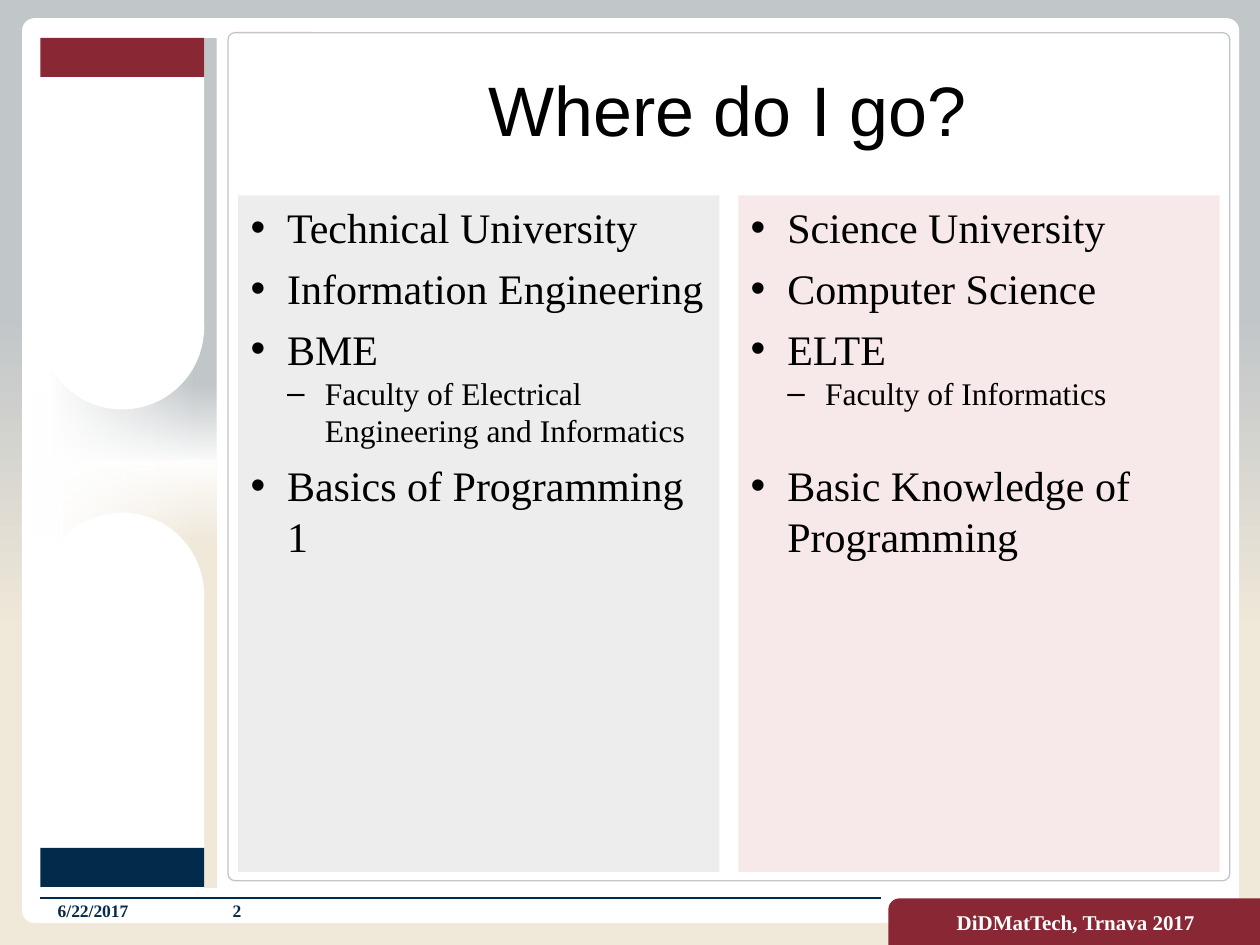
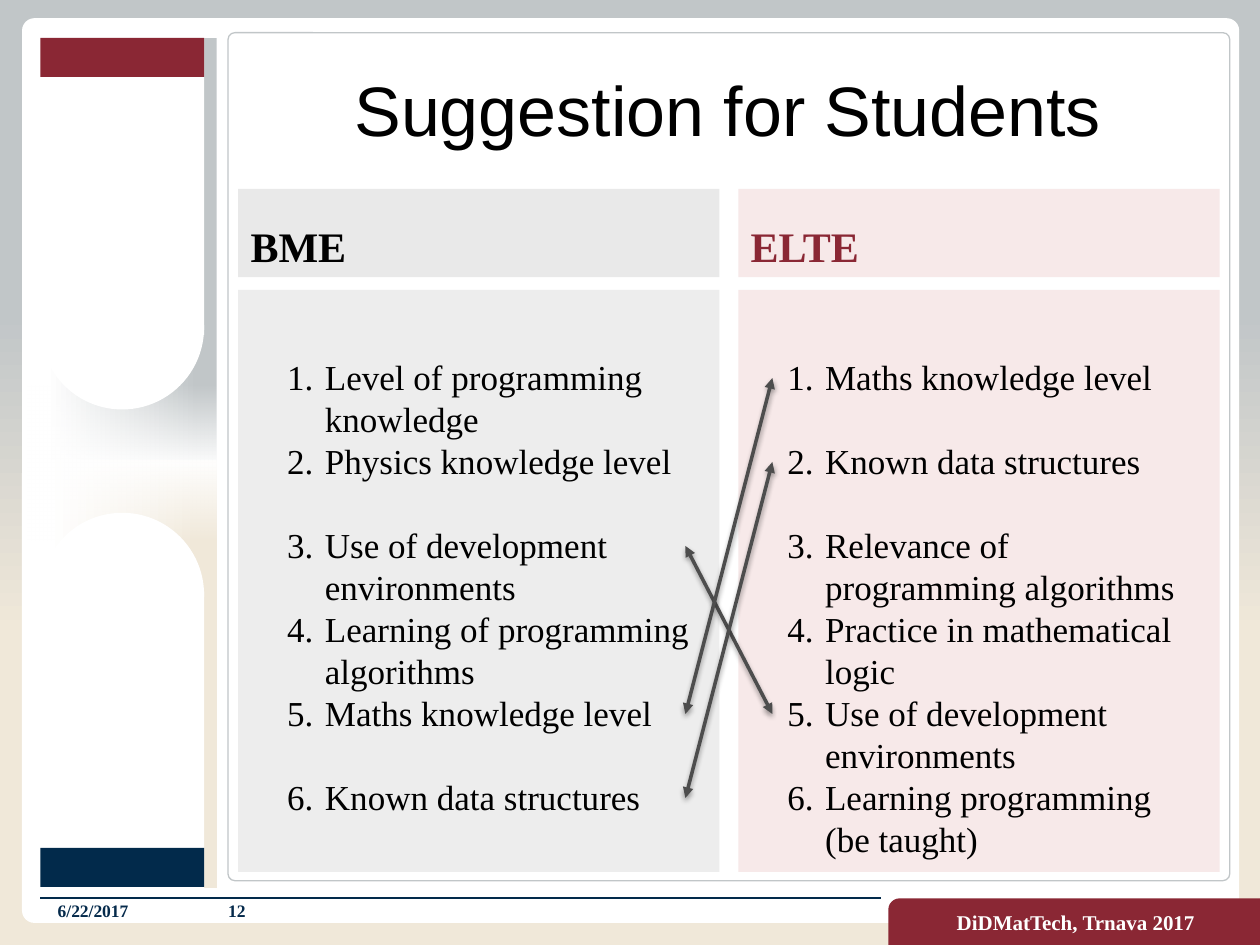
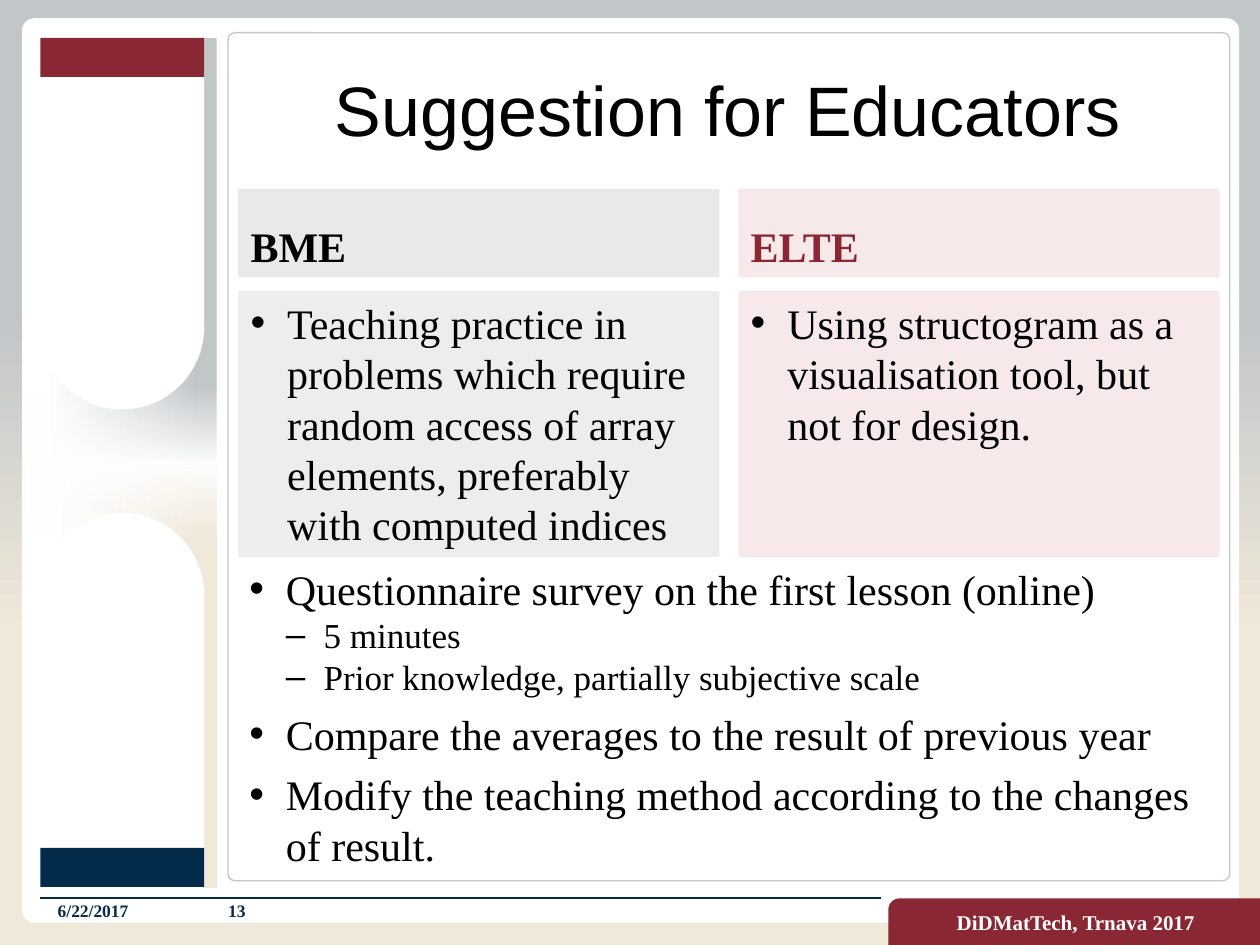
import pptx
import pptx.util
from dataclasses import dataclass
from lxml import etree
from pptx.dml.color import RGBColor
from pptx.enum.shapes import MSO_CONNECTOR, MSO_SHAPE
from pptx.enum.text import MSO_ANCHOR, PP_ALIGN
from pptx.oxml.ns import qn
from pptx.util import Inches, Pt


@dataclass(frozen=True)
class Theme:
    white: str = "FFFFFF"
    black: str = "000000"
    silver: str = "C1C6C8"
    sand: str = "F0E8D9"
    wine: str = "8A2734"
    navy: str = "022A4B"
    small_navy: str = "052A4B"
    arrow: str = "4D4D4D"
    gray_panel: str = "EDEDED"
    gray_head: str = "E9E9E9"
    rose_panel: str = "F7E9E9"
    title_font: str = "Arial"
    body_font: str = "Times New Roman"
    title: int = 40
    point: int = 24
    sub: int = 20
    small_sub: int = 18
    event: int = 12
    footer: int = 10
    leading: float = 1.2


T = Theme()
DATE = "6/22/2017"
EVENT = "DiDMatTech, Trnava 2017"
COLUMN_LEFTS = (1.89, 5.86)
COLUMN_WIDTH = 3.82
HEAD_TOP, HEAD_HEIGHT = 1.5, 0.7
HEADS = [("BME", T.gray_head, T.black), ("ELTE", T.rose_panel, T.wine)]
PANEL_FILLS = (T.gray_panel, T.rose_panel)

KINDS = {
    "point": dict(margin=0.29, hang=0.29, before=6, size=T.point, bullet="•"),
    "dash": dict(margin=0.59, hang=0.3, before=0, size=T.sub, bullet="–"),
    "small dash": dict(margin=0.59, hang=0.3, before=0, size=T.small_sub, bullet="–"),
    "number": dict(margin=0.59, hang=0.3, before=0, size=T.sub, bullet=None),
}

SLIDES = [
    dict(
        title="Where do I go?", number="2", heads=False, top=1.55, height=5.37, inset=0.05,
        columns=[
            [("point", "Technical University", 0),
             ("point", "Information Engineering", 0),
             ("point", "BME", 0),
             ("small dash", "Faculty of Electrical Engineering and Informatics", 0),
             ("point", "Basics of Programming 1", 0)],
            [("point", "Science University", 0),
             ("point", "Computer Science", 0),
             ("point", "ELTE", 0),
             ("small dash", "Faculty of Informatics", 1),
             ("point", "Basic Knowledge of Programming", 0)],
        ],
        links=[], summary=[],
    ),
    dict(
        title="Suggestion for Students", number="12", heads=True, top=2.3, height=4.62, inset=0.52,
        columns=[
            [("number", "Level of programming knowledge", 0),
             ("number", "Physics knowledge level", 1),
             ("number", "Use of development environments", 0),
             ("number", "Learning of programming algorithms", 0),
             ("number", "Maths knowledge level", 1),
             ("number", "Known data structures", 0)],
            [("number", "Maths knowledge level", 1),
             ("number", "Known data structures", 1),
             ("number", "Relevance of programming algorithms", 0),
             ("number", "Practice in mathematical logic", 0),
             ("number", "Use of development environments", 0),
             ("number", "Learning programming\n(be taught)", 0)],
        ],
        links=[(3, 5), (5, 1), (6, 2)], summary=[],
    ),
    dict(
        title="Suggestion for Educators", number="13", heads=True, top=2.31, height=2.11, inset=0.05,
        columns=[
            [("point", "Teaching practice in problems which require random access of array "
                       "elements, preferably with computed indices", 0)],
            [("point", "Using structogram as a visualisation tool, but not for design.", 0)],
        ],
        links=[],
        summary=[
            ("point", "Questionnaire survey on the first lesson (online)", 0),
            ("dash", "5 minutes", 0),
            ("dash", "Prior knowledge, partially subjective scale", 0),
            ("point", "Compare the averages to the result of previous year", 0),
            ("point", "Modify the teaching method according to the changes of result.", 0),
        ],
    ),
]


def rgb(color):
    return RGBColor.from_string(color)


def box(at):
    return [Inches(v) for v in at]


def gradient(owner, stops, angle):
    grad = etree.Element(qn("a:gradFill"), rotWithShape="1")
    stop_list = etree.SubElement(grad, qn("a:gsLst"))
    for position, color, alpha in stops:
        stop = etree.SubElement(stop_list, qn("a:gs"), pos=str(position * 1000))
        clr = etree.SubElement(stop, qn("a:srgbClr"), val=color)
        if alpha < 100:
            etree.SubElement(clr, qn("a:alpha"), val=str(alpha * 1000))
    etree.SubElement(grad, qn("a:lin"), ang=str(angle * 60000), scaled="0")
    solid = owner.find(".//" + qn("a:solidFill"))
    solid.getparent().replace(solid, grad)


def add_shape(s, at, fill=T.white, kind=MSO_SHAPE.RECTANGLE, line=None, adj=None):
    sp = s.shapes.add_shape(kind, *box(at))
    sp.shadow.inherit = False
    sp.fill.solid()
    sp.fill.fore_color.rgb = rgb(fill)
    if line:
        sp.line.color.rgb = rgb(line)
        sp.line.width = Pt(0.75)
    else:
        sp.line.fill.background()
    if adj is not None:
        sp.adjustments[0] = adj
    return sp


def add_line(s, start, end, color, width):
    cx = s.shapes.add_connector(MSO_CONNECTOR.STRAIGHT, *box(start + end))
    cx.line.color.rgb = rgb(color)
    cx.line.width = Pt(width)
    return cx, etree.SubElement(cx._element.spPr, qn("a:effectLst"))


def add_run(p, text, size, color=T.black, font=T.body_font, bold=False):
    r = p.add_run()
    r.text = text
    r.font.name, r.font.size, r.font.bold = font, Pt(size), bold
    r.font.color.rgb = rgb(color)


def write_label(sp, text, size, align=PP_ALIGN.LEFT, anchor=MSO_ANCHOR.MIDDLE, **style):
    tf = sp.text_frame
    tf.word_wrap = True
    tf.vertical_anchor = anchor
    p = tf.paragraphs[0]
    p.alignment = align
    add_run(p, text, size, **style)


def write_list(sp, items, inset=0.05):
    tf = sp.text_frame
    tf.word_wrap = True
    tf.vertical_anchor = MSO_ANCHOR.TOP
    tf.margin_top = Inches(inset)
    for i, (kind, text, blank_lines) in enumerate(items):
        k = KINDS[kind]
        p = tf.add_paragraph() if i else tf.paragraphs[0]
        pPr = p._p.get_or_add_pPr()
        pPr.set("marL", str(Inches(k["margin"])))
        pPr.set("indent", str(-Inches(k["hang"])))
        if k["bullet"]:
            etree.SubElement(pPr, qn("a:buFont"), typeface=T.title_font)
            etree.SubElement(pPr, qn("a:buChar"), char=k["bullet"])
        else:
            etree.SubElement(pPr, qn("a:buAutoNum"), type="arabicPeriod")
        leading = k["size"] * T.leading
        p.alignment = PP_ALIGN.LEFT
        p.line_spacing = Pt(leading)
        p.space_before = Pt(k["before"] if i else 0)
        p.space_after = Pt(leading * blank_lines)
        for n, part in enumerate(text.split("\n")):
            if n:
                p.add_line_break()
            add_run(p, part, k["size"])


def add_frame(s):
    s.background.fill.solid()
    s.background.fill.fore_color.rgb = rgb(T.white)
    gradient(s._element, [(33, T.silver, 100), (67, T.sand, 100)], 90)
    add_shape(s, (0.18, 0.15, 9.65, 7.17), kind=MSO_SHAPE.ROUNDED_RECTANGLE, line=T.white, adj=0.013)
    bands = [
        ((0.22, 0.3, 1.5, 3.39), [(10, T.silver, 100), (90, T.white, 100)], 180),
        ((0.22, 3.65, 1.5, 3.4), [(10, T.white, 100), (90, T.sand, 100)], 0),
        ((0.22, 1.61, 1.5, 4.13), [(35, T.white, 0), (50, T.white, 95), (65, T.white, 0)], 90),
    ]
    for at, stops, angle in bands:
        gradient(add_shape(s, at)._element, stops, angle)
    add_shape(s, (1.81, 0.26, 7.95, 6.73), kind=MSO_SHAPE.ROUNDED_RECTANGLE, line=T.silver, adj=0.008)
    pillar = [
        (0.3, 2.36, T.white, MSO_SHAPE.RECTANGLE),
        (0.3, 0.31, T.wine, MSO_SHAPE.RECTANGLE),
        (4.69, 2.36, T.white, MSO_SHAPE.RECTANGLE),
        (1.95, 1.3, T.white, MSO_SHAPE.OVAL),
        (4.07, 1.3, T.white, MSO_SHAPE.OVAL),
        (6.73, 0.31, T.navy, MSO_SHAPE.RECTANGLE),
    ]
    for top, height, fill, kind in pillar:
        add_shape(s, (0.32, top, 1.3, height), fill, kind)
    add_line(s, (0.32, 7.13), (6.99, 7.13), T.navy, 1.25)


def add_footer(s, number):
    tab = add_shape(s, (7.05, 7.13, 2.95, 0.37), T.wine, MSO_SHAPE.ROUND_1_RECTANGLE, adj=0.244)
    tab._element.spPr.find(qn("a:xfrm")).set("flipH", "1")
    write_label(tab, EVENT, T.event, PP_ALIGN.CENTER, color=T.white, bold=True)
    for left, text, align in ((1.39, number, PP_ALIGN.CENTER), (0.36, DATE, PP_ALIGN.LEFT)):
        sp = s.shapes.add_textbox(*box((left, 7.13, 0.98, 0.2)))
        write_label(sp, text, T.footer, align, color=T.small_navy, bold=True)


def add_link(s, left_item, right_item):
    left_y, right_y = (3 + (n - 1) * 2 / 3 for n in (left_item, right_item))
    cx, effects = add_line(s, (5.44, left_y), (6.13, right_y), T.arrow, 2)
    ln = cx.line._get_or_add_ln()
    for end in ("a:headEnd", "a:tailEnd"):
        etree.SubElement(ln, qn(end), type="triangle")
    shadow = etree.SubElement(effects, qn("a:outerShdw"), blurRad=str(Pt(3.1)),
                              dist=str(Pt(1.6)), dir="5400000", rotWithShape="0")
    clr = etree.SubElement(shadow, qn("a:srgbClr"), val=T.black)
    etree.SubElement(clr, qn("a:alpha"), val="38000")


def add_content(s, data):
    title = s.shapes.add_textbox(*box((1.84, 0.31, 7.87, 1.1)))
    write_label(title, data["title"], T.title, PP_ALIGN.CENTER, font=T.title_font)
    for left, fill, items in zip(COLUMN_LEFTS, PANEL_FILLS, data["columns"]):
        panel = add_shape(s, (left, data["top"], COLUMN_WIDTH, data["height"]), fill)
        write_list(panel, items, data["inset"])
    add_footer(s, data["number"])
    for link in data["links"]:
        add_link(s, *link)
    if data["summary"]:
        write_list(s.shapes.add_textbox(*box((1.88, 4.42, 7.82, 2.57))), data["summary"])
    if data["heads"]:
        for left, (text, fill, color) in zip(COLUMN_LEFTS, HEADS):
            head = add_shape(s, (left, HEAD_TOP, COLUMN_WIDTH, HEAD_HEIGHT), fill)
            write_label(head, text, T.point, anchor=MSO_ANCHOR.BOTTOM, color=color, bold=True)


def main():
    prs = pptx.Presentation()
    prs.slide_width, prs.slide_height = Inches(10), Inches(7.5)
    for data in SLIDES:
        s = prs.slides.add_slide(prs.slide_layouts[6])
        add_frame(s)
        add_content(s, data)
    prs.save("out.pptx")


if __name__ == "__main__":
    main()
